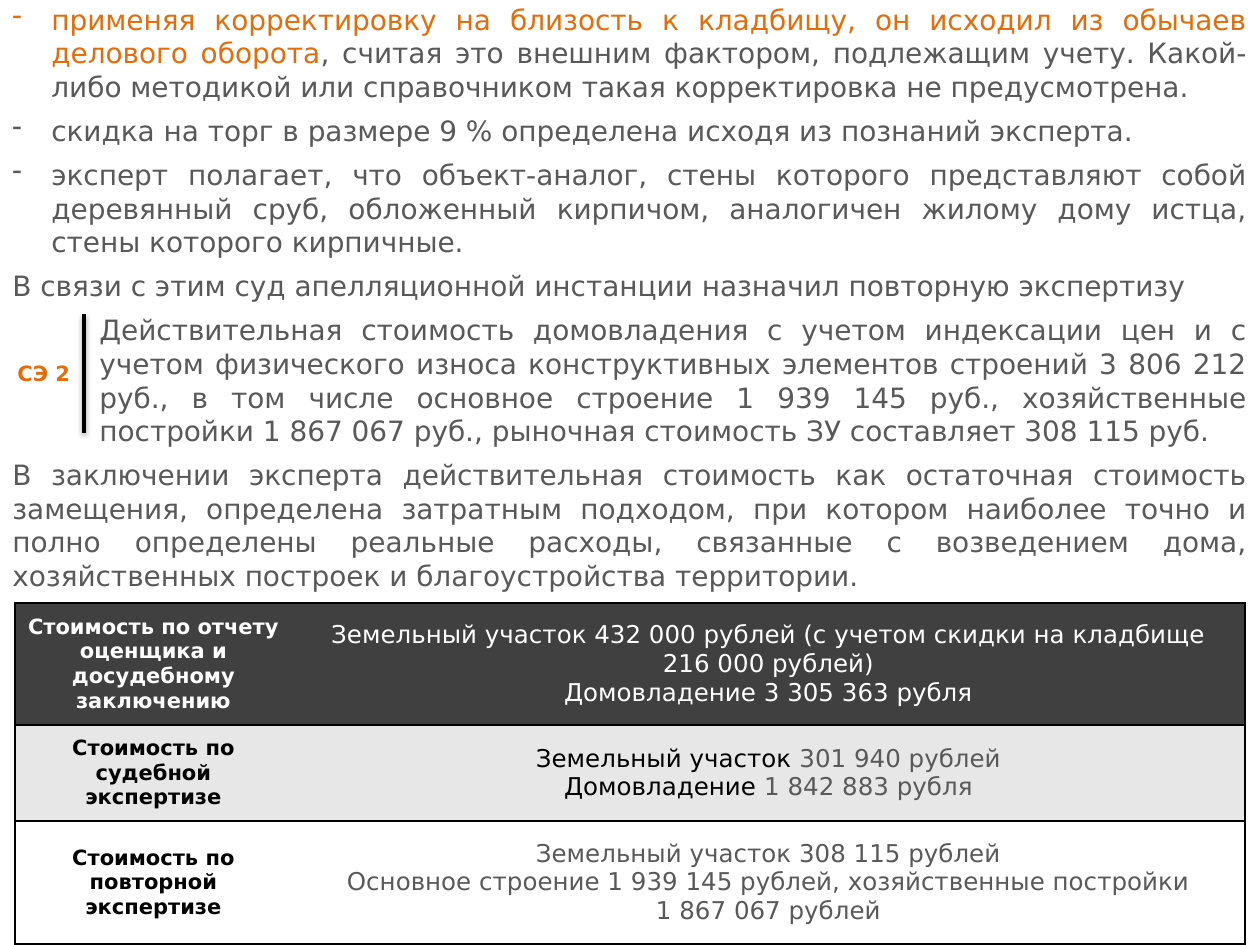
from lxml import etree
from pptx import Presentation
from pptx import util as u
from pptx.dml.color import RGBColor
from pptx.enum import shapes, text
from pptx.oxml import parse_xml
from pptx.oxml.ns import nsdecls, qn

PX = 914400 / 126
COLORS = {"orange": "E46C0A", "gray": "595959", "black": "000000",
          "white": "FFFFFF", "dark": "404040", "light": "E7E7E7"}


def px(*lengths):
    return [u.Emu(round(length * PX)) for length in lengths]


def write(frame, paragraphs, paragraph_format, font_format):
    """Fill a text frame; each paragraph is a list of (text, color) runs."""
    for number, runs in enumerate(paragraphs):
        paragraph = frame.add_paragraph() if number else frame.paragraphs[0]
        for name, value in paragraph_format.items():
            setattr(paragraph, name, value)
        for words, color in runs:
            run = paragraph.add_run()
            run.text = words
            run.font.color.rgb = RGBColor.from_string(COLORS[color])
            for name, value in font_format.items():
                setattr(run.font, name, value)


presentation = Presentation()
presentation.slide_width, presentation.slide_height = px(1260, 945)
slide = presentation.slides.add_slide(presentation.slide_layouts[6])

body_font = {"name": "DejaVu Sans", "size": u.Pt(16), "bold": False}
cell_font = {**body_font, "size": u.Pt(14)}
label_font = {**body_font, "size": u.Pt(12), "bold": True}

# Main text: (left margin, first-line indent, runs)
body = [
    (39, -39, [("применяя корректировку на близость к кладбищу, он исходил из обычаев делового оборота", "orange"),
               (", считая это внешним фактором, подлежащим учету. Какой-либо методикой или справочником "
                "такая корректировка не предусмотрена.", "gray")]),
    (39, -39, [("скидка на торг в размере 9 % определена исходя из познаний эксперта.", "gray")]),
    (39, -39, [("эксперт полагает, что объект-аналог, стены которого представляют собой деревянный сруб, "
                "обложенный кирпичом, аналогичен жилому дому истца, стены которого кирпичные.", "gray")]),
    (0, 0, [("В связи с этим суд апелляционной инстанции назначил повторную экспертизу", "gray")]),
    (87, 0, [("Действительная стоимость домовладения с учетом индексации цен и с учетом физического износа "
              "конструктивных элементов строений 3 806 212 руб., в том числе основное строение "
              "1 939 145 руб., хозяйственные постройки 1 867 067 руб., рыночная стоимость ЗУ "
              "составляет 308 115 руб.", "gray")]),
    (0, 0, [("В заключении эксперта действительная стоимость как остаточная стоимость замещения, определена "
             "затратным подходом, при котором наиболее точно и полно определены реальные расходы, связанные "
             "с возведением дома, хозяйственных построек и благоустройства территории.", "gray")]),
]
frame = slide.shapes.add_textbox(*px(0, -4, 1260, 609)).text_frame
frame.word_wrap = True
write(frame, [runs for _, _, runs in body],
      {"alignment": text.PP_ALIGN.JUSTIFY, "space_before": u.Pt(6)}, body_font)
for paragraph, (margin, indent, _) in zip(frame.paragraphs, body):
    properties = paragraph._p.get_or_add_pPr()
    for name, length in zip(("marL", "indent"), px(margin, indent)):
        properties.set(name, str(length))
    if indent:
        etree.SubElement(properties, qn("a:buFontTx"))
        etree.SubElement(properties, qn("a:buChar")).set("char", "-")

# Vertical rule with a soft shadow
rule = slide.shapes.add_connector(shapes.MSO_CONNECTOR.STRAIGHT, *px(84, 314, 84, 433))
rule.line.width = u.Pt(2)
rule.line.color.rgb = RGBColor.from_string(COLORS["black"])
rule._element.spPr.append(parse_xml(
    f'<a:effectLst {nsdecls("a")}><a:outerShdw blurRad="{u.Pt(3.1)}" dist="{u.Pt(1.6)}" dir="5400000" '
    f'rotWithShape="0"><a:srgbClr val="{COLORS["black"]}"><a:alpha val="38000"/></a:srgbClr>'
    '</a:outerShdw></a:effectLst>'))

# Label beside the rule
frame = slide.shapes.add_textbox(*px(5, 354, 97, 38)).text_frame
frame.word_wrap = True
write(frame, [[("СЭ 2", "orange")]], {}, label_font)

# Cost table: (fill, label color, label, value paragraphs)
rows = [
    ("dark", "white", "Стоимость по отчету оценщика и досудебному заключению",
     [[("Земельный участок 432 000 рублей (с учетом скидки на кладбище 216 000 рублей)", "white")],
      [("Домовладение 3 305 363 рубля", "white")]]),
    ("light", "black", "Стоимость по судебной экспертизе",
     [[("Земельный участок ", "black"), ("301 940 рублей", "gray")],
      [("Домовладение ", "black"), ("1 842 883 рубля", "gray")]]),
    ("white", "black", "Стоимость по повторной экспертизе",
     [[("Земельный участок 308 115 рублей", "gray")],
      [("Основное строение 1 939 145 рублей, хозяйственные постройки", "gray")],
      [("1 867 067 рублей", "gray")]]),
]
table = slide.shapes.add_table(3, 2, *px(15, 603, 1230, 341)).table
table.first_row = table.horz_banding = False
for column, width in zip(table.columns, px(277, 953)):
    column.width = width
for row, height in zip(table.rows, px(122, 96, 123)):
    row.height = height

for row, (fill, label_color, label, values) in zip(table.rows, rows):
    contents = [([[(label, label_color)]], label_font, "R"), (values, cell_font, "L")]
    for cell, (paragraphs, font, inner_side) in zip(row.cells, contents):
        write(cell.text_frame, paragraphs, {"alignment": text.PP_ALIGN.CENTER}, font)
        cell.vertical_anchor = text.MSO_ANCHOR.MIDDLE
        # Borders everywhere except between the two columns
        for side in "LRTB":
            paint = "<a:noFill/>" if side == inner_side else (
                f'<a:solidFill><a:srgbClr val="{COLORS["black"]}"/></a:solidFill>')
            cell._tc.get_or_add_tcPr().append(parse_xml(
                f'<a:ln{side} {nsdecls("a")} w="{u.Pt(1)}">{paint}</a:ln{side}>'))
        cell.fill.solid()
        cell.fill.fore_color.rgb = RGBColor.from_string(COLORS[fill])

presentation.save("out.pptx")
